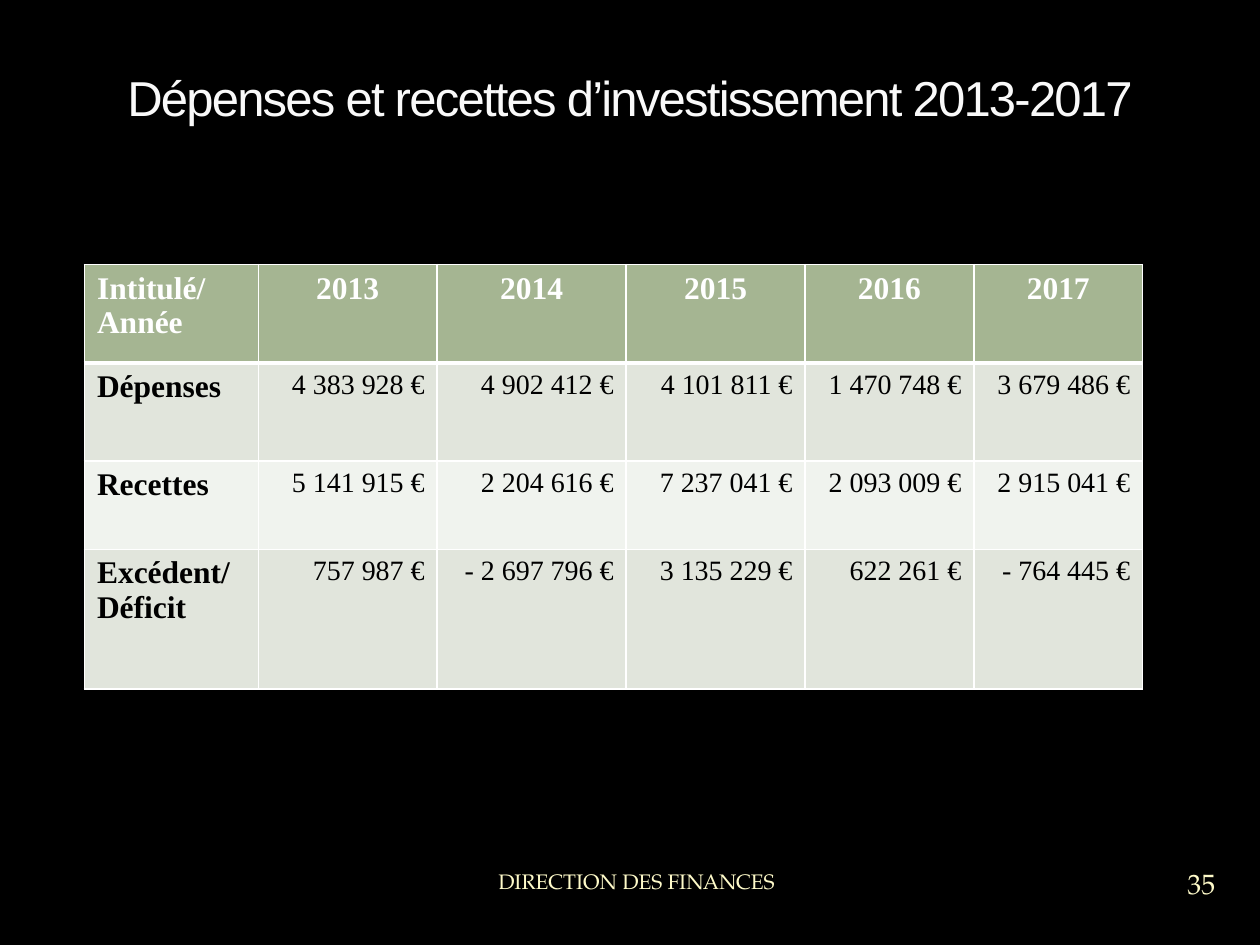
import dataclasses

import lxml.etree
import pptx
import pptx.dml.color
import pptx.enum.text
import pptx.oxml.ns
import pptx.util

Inches = pptx.util.Inches
Align = pptx.enum.text.PP_ALIGN
Anchor = pptx.enum.text.MSO_ANCHOR


@dataclasses.dataclass(frozen=True)
class Theme:
    background: str = "000000"
    title: str = "F9F9F9"
    footer: str = "FEFAC9"
    header_fill: str = "A5B592"
    band_fills: tuple = ("E1E5DC", "F0F3EE")
    grid: str = "FFFFFF"
    header_text: str = "FFFFFF"
    body_text: str = "000000"
    title_font: str = "Arial"
    table_font: str = "Times New Roman"
    footer_font: str = "TeX Gyre Pagella"
    title_size: int = 28
    label_size: int = 18
    amount_size: int = 16
    number_size: int = 16
    footer_size: int = 12


THEME = Theme()

COLUMN_WIDTHS = (1.38, 1.42, 1.5, 1.42, 1.34, 1.34)
ROW_HEIGHTS = (0.78, 0.78, 0.7, 1.11)
BUDGET = (
    ("Intitulé/\nAnnée", "2013", "2014", "2015", "2016", "2017"),
    ("Dépenses", "4 383 928 €", "4 902 412 €", "4 101 811 €", "1 470 748 €", "3 679 486 €"),
    ("Recettes", "5 141 915 €", "2 204 616 €", "7 237 041 €", "2 093 009 €", "2 915 041 €"),
    ("Excédent/\nDéficit", "757 987 €", "- 2 697 796 €", "3 135 229 €", "622 261 €", "- 764 445 €"),
)


def rgb(value):
    return pptx.dml.color.RGBColor.from_string(value)


def write(frame, text, align, color, **font_format):
    """Fill a text frame, one paragraph per line of text."""
    frame.text = text
    for paragraph in frame.paragraphs:
        paragraph.alignment = align
        for run in paragraph.runs:
            run.font.color.rgb = rgb(color)
            for attribute, value in font_format.items():
                setattr(run.font, attribute, value)


def add_text(slide, box, text, align, color, frame_format, **font_format):
    frame = slide.shapes.add_textbox(*map(Inches, box)).text_frame
    frame.word_wrap = True
    for attribute, value in frame_format.items():
        setattr(frame, attribute, value)
    write(frame, text, align, color, **font_format)
    return frame


def add_borders(cell, widths):
    """Draw cell borders; widths maps each side's tag to points."""
    properties = cell._tc.get_or_add_tcPr()
    for position, (side, points) in enumerate(widths.items()):
        line = lxml.etree.Element(pptx.oxml.ns.qn(f"a:{side}"), w=str(pptx.util.Pt(points)))
        fill = lxml.etree.SubElement(line, pptx.oxml.ns.qn("a:solidFill"))
        lxml.etree.SubElement(fill, pptx.oxml.ns.qn("a:srgbClr"), val=THEME.grid)
        properties.insert(position, line)


def add_budget_table(slide, left, top):
    size = (sum(COLUMN_WIDTHS), sum(ROW_HEIGHTS))
    table = slide.shapes.add_table(
        len(ROW_HEIGHTS), len(COLUMN_WIDTHS), *map(Inches, (left, top, *size))
    ).table
    for column, width in zip(table.columns, COLUMN_WIDTHS):
        column.width = Inches(width)
    for row, height in zip(table.rows, ROW_HEIGHTS):
        row.height = Inches(height)

    for r, entries in enumerate(BUDGET):
        header = r == 0
        for c, entry in enumerate(entries):
            label = c == 0
            cell = table.cell(r, c)
            cell.fill.solid()
            cell.fill.fore_color.rgb = rgb(
                THEME.header_fill if header else THEME.band_fills[(r - 1) % 2]
            )
            align = Align.LEFT if label else Align.CENTER if header else Align.RIGHT
            strong = header or label
            write(
                cell.text_frame, entry, align,
                THEME.header_text if header else THEME.body_text,
                name=THEME.table_font, bold=strong,
                size=pptx.util.Pt(THEME.label_size if strong else THEME.amount_size),
            )
            # A heavier rule separates the years from the amounts
            add_borders(cell, {
                "lnL": 1, "lnR": 1,
                "lnT": 3 if r == 1 else 1,
                "lnB": 3 if header else 1,
            })


def main():
    deck = pptx.Presentation()
    deck.slide_width, deck.slide_height = Inches(10), Inches(7.5)
    slide = deck.slides.add_slide(deck.slide_layouts[6])
    slide.background.fill.solid()
    slide.background.fill.fore_color.rgb = rgb(THEME.background)

    # Amounts by year
    add_budget_table(slide, 0.67, 2.1)

    # Page number and department
    no_margins = dict.fromkeys(
        ("margin_left", "margin_top", "margin_right", "margin_bottom"), 0
    )
    add_text(
        slide, (9.2, 6.76, 0.67, 0.5), "35", Align.CENTER, THEME.footer,
        {"vertical_anchor": Anchor.MIDDLE, **no_margins},
        name=THEME.footer_font, size=pptx.util.Pt(THEME.number_size),
    )
    add_text(
        slide, (2.33, 6.78, 3.92, 0.42), "DIRECTION DES FINANCES",
        Align.RIGHT, THEME.footer, {"vertical_anchor": Anchor.MIDDLE},
        name=THEME.footer_font, size=pptx.util.Pt(THEME.footer_size),
    )

    # Title, raised by its bottom margin and set with tight letter spacing
    title = add_text(
        slide, (0.5, 0.17, 9, 1.33), "Dépenses et recettes d’investissement 2013-2017",
        Align.CENTER, THEME.title,
        {"vertical_anchor": Anchor.BOTTOM, "margin_bottom": Inches(0.5)},
        name=THEME.title_font, size=pptx.util.Pt(THEME.title_size),
    )
    title.paragraphs[0].runs[0].font._element.set("spc", "-100")

    deck.save("out.pptx")


if __name__ == "__main__":
    main()
